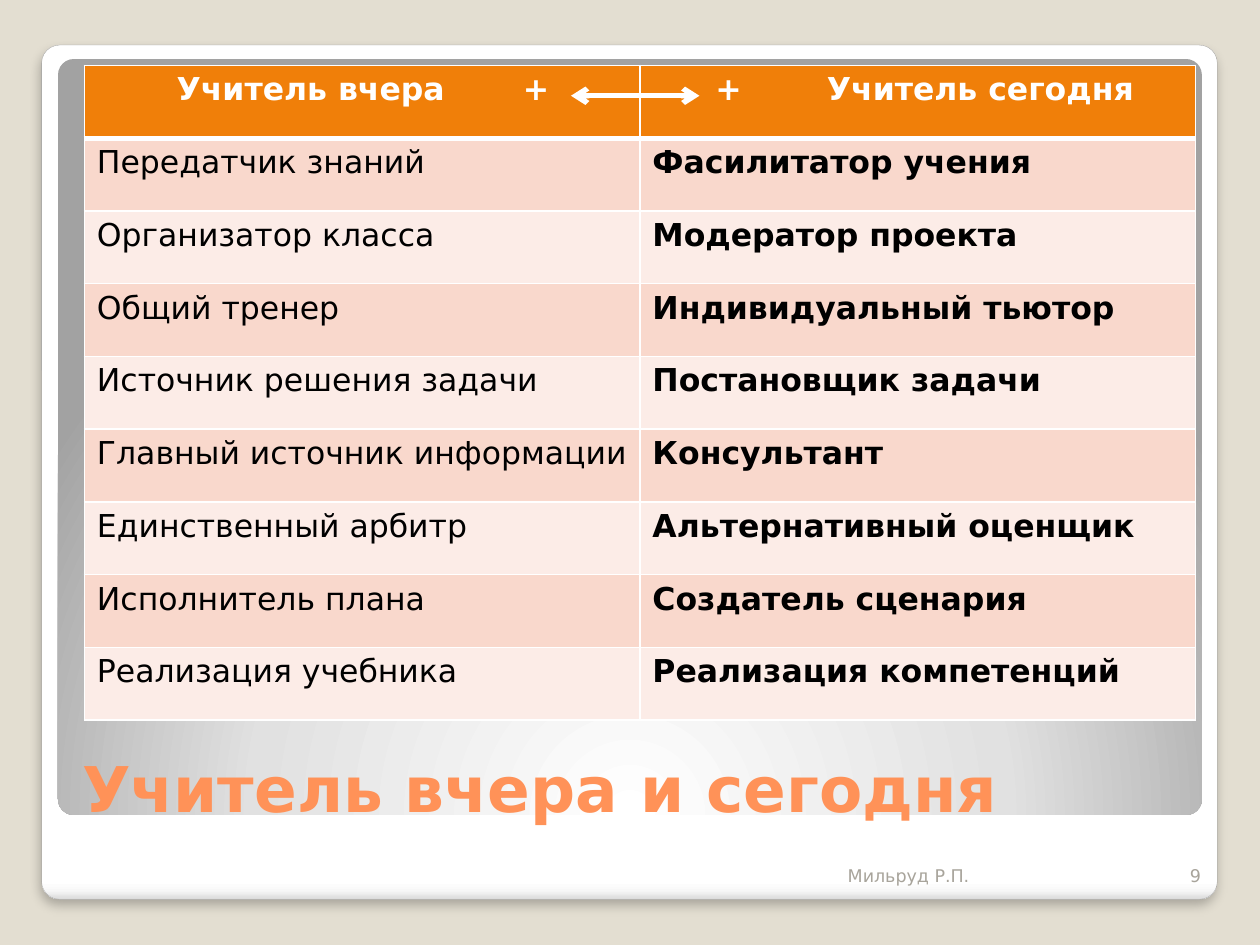
from lxml.etree import SubElement
from pptx import Presentation
from pptx.dml.color import RGBColor
from pptx.enum.shapes import MSO_CONNECTOR, MSO_SHAPE
from pptx.enum.text import MSO_ANCHOR, PP_ALIGN
from pptx.oxml.ns import qn
from pptx.util import Cm, Pt

FONT = "DejaVu Sans"
TITLE = "Учитель вчера и сегодня"
AUTHOR = "Мильруд Р.П."
PAGE = "9"

# Header text, left cell margin and tab stop in cm
HEADERS = [
    ("Учитель вчера\t+", 1.86, 6.98),
    ("+\tУчитель сегодня", 1.52, 2.25),
]
ROLES = [
    ("Передатчик знаний", "Фасилитатор учения"),
    ("Организатор класса", "Модератор проекта"),
    ("Общий тренер", "Индивидуальный тьютор"),
    ("Источник решения задачи", "Постановщик задачи"),
    ("Главный источник информации", "Консультант"),
    ("Единственный арбитр", "Альтернативный оценщик"),
    ("Исполнитель плана", "Создатель сценария"),
    ("Реализация учебника", "Реализация компетенций"),
]
HEADER_FILL = "F07F09"
BANDS = ["F9D8CC", "FCECE7"]
FRAME_STOPS = [(0, "FFFFFF"), (98, "FFFFFF"), (99, "F7F7F7"), (100, "DADADA")]
PANEL_STOPS = [(0, "FFFFFF"), (55, "E1E1E1"), (100, "A2A2A2")]

TITLE_FORMAT = {"size": Pt(36), "bold": True}
FOOTER_FORMAT = {"size": Pt(10), "bold": False}
HEADER_FORMAT = {"size": Pt(18), "bold": True}
ROLE_FORMATS = [{"size": Pt(18), "bold": False}, {"size": Pt(18), "bold": True}]


def rgb(value):
    return RGBColor.from_string(value)


def node(parent, tag, **attributes):
    """Append a DrawingML element to parent."""
    return SubElement(parent, qn(f"a:{tag}"),
                      {name: str(value) for name, value in attributes.items()})


def write(frame, text, color, font_format, align=PP_ALIGN.LEFT):
    paragraph = frame.paragraphs[0]
    paragraph.alignment = align
    run = paragraph.add_run()
    run.text = text
    run.font.name = FONT
    run.font.color.rgb = rgb(color)
    for name, value in font_format.items():
        setattr(run.font, name, value)
    return paragraph


def add_panel(slide, box, stops):
    """Add a slightly rounded panel and return it with its empty-ended gradient."""
    panel = slide.shapes.add_shape(MSO_SHAPE.ROUNDED_RECTANGLE, *map(Cm, box))
    panel.adjustments[0] = 0.021
    panel.shadow.inherit = False
    panel.line.fill.background()
    panel.fill.gradient()
    gradient = panel.element.spPr.find(qn("a:gradFill"))
    for child in list(gradient):
        gradient.remove(child)
    stop_list = node(gradient, "gsLst")
    for position, color in stops:
        node(node(stop_list, "gs", pos=position * 1000), "srgbClr", val=color)
    return panel, gradient


def add_background(slide):
    slide.background.fill.solid()
    slide.background.fill.fore_color.rgb = rgb("E3DED1")

    frame, gradient = add_panel(slide, (0.84, 0.91, 23.7, 17.22), FRAME_STOPS)
    node(gradient, "lin", ang=5400000, scaled=0)
    frame.line.color.rgb = rgb("A4A4A4")
    frame.line.width = Pt(0.16)
    effects = frame.element.spPr.find(qn("a:effectLst"))
    shadow = node(effects, "outerShdw", blurRad=Pt(6), dist=Pt(4),
                  dir=5400000, rotWithShape=0)
    node(node(shadow, "srgbClr", val="000000"), "alpha", val=25000)

    _, gradient = add_panel(slide, (1.17, 1.19, 23.06, 15.24), PANEL_STOPS)
    circle = node(gradient, "path", path="circle")
    node(circle, "fillToRect", l=50000, t=175000, r=50000, b=-75000)


def add_title(slide):
    title = slide.shapes.title
    title.element.getparent().append(title.element)  # in front of the panels
    title.left, title.top, title.width, title.height = map(Cm, (1.4, 13.84, 22.73, 2.92))
    title.text_frame.vertical_anchor = MSO_ANCHOR.BOTTOM
    write(title.text_frame, TITLE, "FF9258", TITLE_FORMAT)


def add_footer(slide, text, left, width, align):
    box = slide.shapes.add_textbox(Cm(left), Cm(16.97), Cm(width), Cm(1.02))
    box.text_frame.word_wrap = True
    box.text_frame.vertical_anchor = MSO_ANCHOR.BOTTOM
    write(box.text_frame, text, "A8A49B", FOOTER_FORMAT, align)


def style_cell(cell, fill, bottom_width=1):
    properties = cell._tc.get_or_add_tcPr()
    for side, width in (("L", 1), ("R", 1), ("T", 1), ("B", bottom_width)):
        border = node(properties, f"ln{side}", w=Pt(width))
        node(node(border, "solidFill"), "srgbClr", val="FFFFFF")
    cell.fill.solid()
    cell.fill.fore_color.rgb = rgb(fill)


def add_roles_table(slide):
    row_count = len(ROLES) + 1
    table = slide.shapes.add_table(row_count, len(HEADERS), Cm(1.7), Cm(1.32),
                                   Cm(22.4), Cm(13.2)).table
    for row in table.rows:
        row.height = Cm(13.2 / row_count)

    for column, (text, margin, tab) in enumerate(HEADERS):
        cell = table.cell(0, column)
        style_cell(cell, HEADER_FILL, bottom_width=3)
        cell.margin_left = Cm(margin)
        paragraph = write(cell.text_frame, text, "FFFFFF", HEADER_FORMAT)
        tabs = node(paragraph._p.get_or_add_pPr(), "tabLst")
        node(tabs, "tab", pos=Cm(tab), algn="l")

    for row, roles in enumerate(ROLES, start=1):
        for column, role in enumerate(roles):
            cell = table.cell(row, column)
            style_cell(cell, BANDS[(row - 1) % len(BANDS)])
            write(cell.text_frame, role, "000000", ROLE_FORMATS[column], PP_ALIGN.JUSTIFY)


def add_double_arrow(slide):
    arrow = slide.shapes.add_connector(MSO_CONNECTOR.STRAIGHT,
                                       Cm(11.51), Cm(1.93), Cm(14.1), Cm(1.93))
    arrow.line.color.rgb = rgb("FFFFFF")
    arrow.line.width = Pt(3)
    line = arrow.line._get_or_add_ln()
    for end in ("headEnd", "tailEnd"):
        node(line, end, type="arrow")
    node(arrow._element.spPr, "effectLst")


def main():
    presentation = Presentation()
    presentation.slide_width, presentation.slide_height = Cm(25.4), Cm(19.05)
    slide = presentation.slides.add_slide(presentation.slide_layouts[5])
    add_background(slide)
    add_title(slide)
    add_footer(slide, AUTHOR, 16.84, 6.35, PP_ALIGN.LEFT)
    add_footer(slide, PAGE, 23.19, 1.27, PP_ALIGN.RIGHT)
    add_roles_table(slide)
    add_double_arrow(slide)
    presentation.save("out.pptx")


if __name__ == "__main__":
    main()
